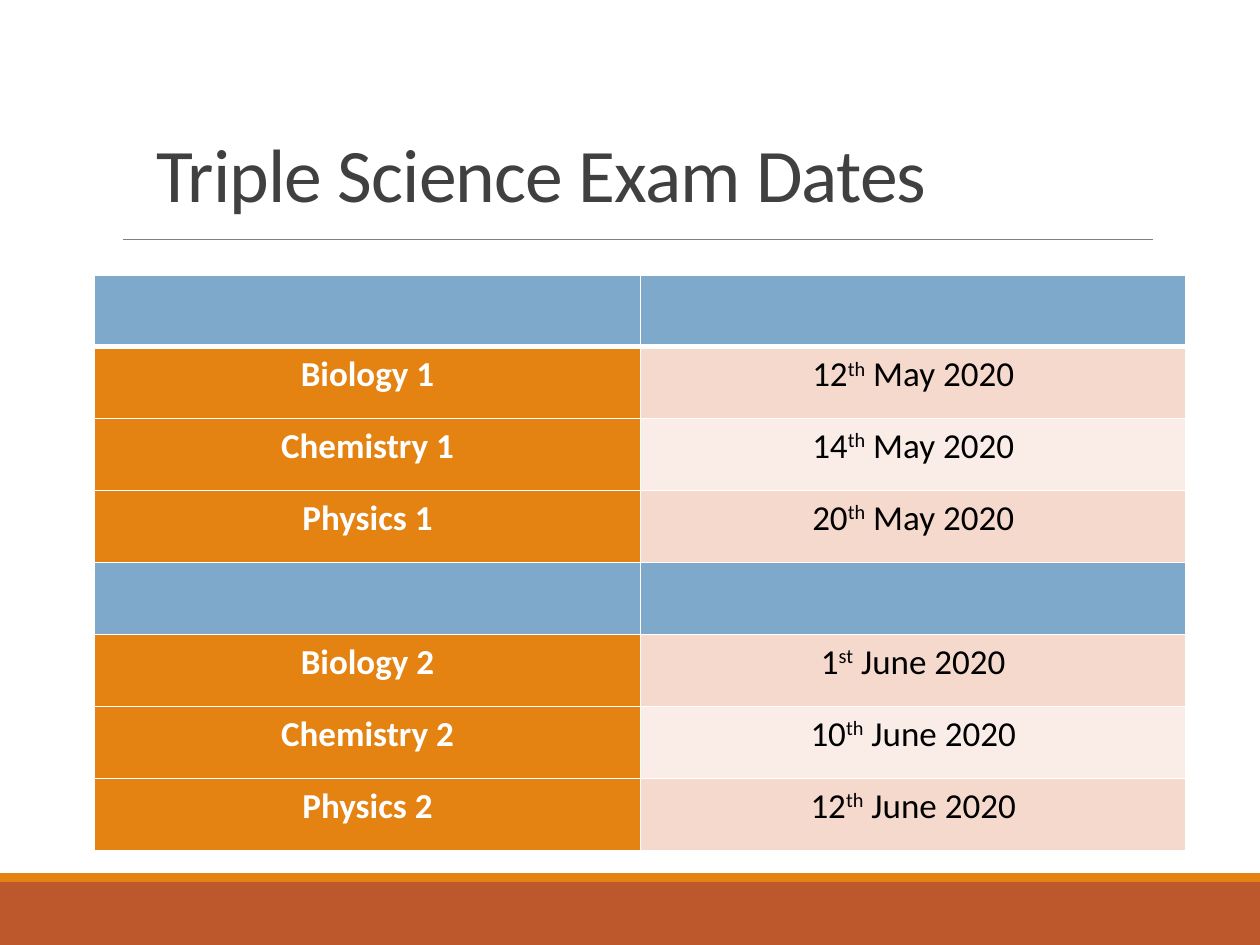
from dataclasses import dataclass
from typing import Any

from lxml.etree import SubElement
from pptx import Presentation
from pptx.dml.color import RGBColor as RGB
from pptx.enum.shapes import MSO_CONNECTOR as Conn, MSO_SHAPE as Shape
from pptx.enum.text import MSO_ANCHOR as Anchor, MSO_AUTO_SIZE as AutoSize, PP_ALIGN as Align
from pptx.oxml.ns import qn
from pptx.util import Cm, Pt

COLORS = {
    "rust": "BD582C", "orange": "E48312", "rule": "808080", "title": "404040",
    "blue": "7EA9CA", "pink": "F5D9CC", "pale": "FAEDE7",
    "white": "FFFFFF", "black": "000000",
}
FONT = "Calibri"
TITLE_FONT = {"name": FONT, "size": Pt(43.2), "bold": False}
SUBJECT_FONT = {"name": FONT, "size": Pt(20), "bold": True}
DATE_FONT = {**SUBJECT_FONT, "bold": False}
TITLE_BOX = {"left": Cm(2.9), "top": Cm(2.84), "width": Cm(19.5), "height": Cm(1.68)}
TITLE_FRAME = {"vertical_anchor": Anchor.BOTTOM, "auto_size": AutoSize.NONE, "word_wrap": True}
TITLE_PARA = {"alignment": Align.LEFT, "line_spacing": 0.85}
CELL_BOX = {"margin_left": Cm(0.18), "margin_right": Cm(0.18),
            "margin_top": 0, "margin_bottom": 0, "vertical_anchor": Anchor.TOP}
CELL_PARA = {"alignment": Align.CENTER, "line_spacing": 1.15}
ROW_H = Cm(1.45)


@dataclass
class Band:
    top: float
    height: float
    color: str


@dataclass
class Exam:
    subject: str
    day: str
    suffix: str
    month: str


BANDS = [Band(17.78, 1.27, "rust"), Band(17.6, 0.18, "orange")]
SITTINGS = [
    [Exam("Biology 1", "12", "th", "May"),
     Exam("Chemistry 1", "14", "th", "May"),
     Exam("Physics 1", "20", "th", "May")],
    [Exam("Biology 2", "1", "st", "June"),
     Exam("Chemistry 2", "10", "th", "June"),
     Exam("Physics 2", "12", "th", "June")],
]


def apply(obj: Any, values: dict) -> None:
    for name, value in values.items():
        setattr(obj, name, value)


def rgb(color: str) -> RGB:
    return RGB.from_string(COLORS[color])


def paint(obj: Any, color: str) -> None:
    obj.fill.solid()
    obj.fill.fore_color.rgb = rgb(color)


def add_run(p: Any, text: str, font: dict, color: str) -> Any:
    r = p.add_run()
    r.text = text
    apply(r.font, font)
    r.font.color.rgb = rgb(color)
    return r


def draw_band(slide: Any, band: Band, width: int) -> None:
    sp = slide.shapes.add_shape(Shape.RECTANGLE, 0, Cm(band.top), width, Cm(band.height))
    sp.shadow.inherit = False
    paint(sp, band.color)
    sp.line.fill.background()


def draw_rule(slide: Any) -> None:
    ln = slide.shapes.add_connector(Conn.STRAIGHT, Cm(2.48), Cm(4.82), Cm(23.24), Cm(4.82))
    ln.line.color.rgb = rgb("rule")
    ln.line.width = Pt(0.5)
    SubElement(ln._element.spPr, qn("a:effectLst"))


def draw_title(slide: Any, text: str) -> None:
    sp = slide.shapes.title
    apply(sp, TITLE_BOX)
    apply(sp.text_frame, TITLE_FRAME)
    p = sp.text_frame.paragraphs[0]
    apply(p, TITLE_PARA)
    r = add_run(p, text, TITLE_FONT, "title")
    r.font._element.set("spc", "-50")


def format_cell(cell: Any, color: str, widths: dict) -> Any:
    tc_pr = cell._tc.get_or_add_tcPr()
    for side in "LRTB":
        ln = SubElement(tc_pr, qn(f"a:ln{side}"), w=str(Pt(widths.get(side, 1))))
        fill = SubElement(ln, qn("a:solidFill"))
        SubElement(fill, qn("a:srgbClr"), val=COLORS["white"])
    paint(cell, color)
    apply(cell, CELL_BOX)
    p = cell.text_frame.paragraphs[0]
    apply(p, CELL_PARA)
    return p


def fill_exam(cells: list, exam: Exam, shade: str, widths: dict) -> None:
    subject, date = (format_cell(c, color, widths) for c, color in zip(cells, ("orange", shade)))
    add_run(subject, exam.subject, SUBJECT_FONT, "white")
    add_run(date, exam.day, DATE_FONT, "black")
    r = add_run(date, exam.suffix, DATE_FONT, "black")
    r.font._element.set("baseline", "30000")
    add_run(date, f" {exam.month} 2020", DATE_FONT, "black")


def draw_table(slide: Any) -> None:
    count = sum(len(exams) + 1 for exams in SITTINGS)
    table = slide.shapes.add_table(count, 2, Cm(1.91), Cm(5.54), Cm(22), ROW_H * count).table
    for row in table.rows:
        row.height = ROW_H
    rows = iter([list(row.cells) for row in table.rows])
    for i, exams in enumerate(SITTINGS):
        edge = 3 if i == 0 else 1
        for cell in next(rows):
            p = format_cell(cell, "blue", {"B": edge})
            p.font.size = SUBJECT_FONT["size"]
        for j, exam in enumerate(exams):
            shade = "pale" if j % 2 else "pink"
            fill_exam(next(rows), exam, shade, {"T": edge if j == 0 else 1})


def main() -> None:
    prs = Presentation()
    apply(prs, {"slide_width": Cm(25.4), "slide_height": Cm(19.05)})
    slide = prs.slides.add_slide(prs.slide_layouts[5])
    for band in BANDS:
        draw_band(slide, band, prs.slide_width)
    draw_rule(slide)
    draw_title(slide, "Triple Science Exam Dates")
    draw_table(slide)
    prs.save("out.pptx")


if __name__ == "__main__":
    main()
